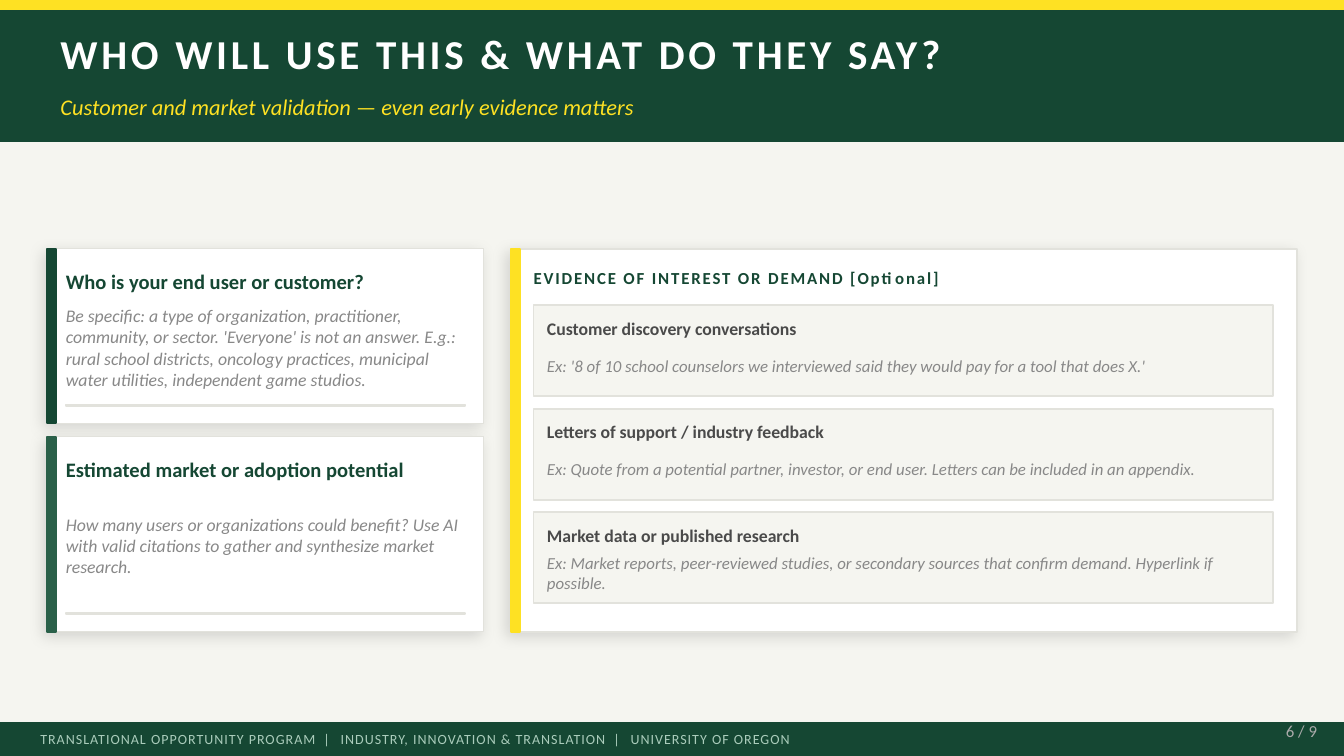
from dataclasses import dataclass

import pptx
import pptx.dml.color
import pptx.enum.shapes
import pptx.enum.text
import pptx.oxml
import pptx.oxml.ns
import pptx.util

Inches = pptx.util.Inches
Pt = pptx.util.Pt
PP_ALIGN = pptx.enum.text.PP_ALIGN

COLORS = {
    "green": "154733", "moss": "2A6049", "yellow": "FEE123", "paper": "F5F5F0",
    "white": "FFFFFF", "border": "E2E2DC", "ink": "4A4A4A", "hint": "888888",
    "footer": "AACCBB", "page": "AAAAAA",
}

# Font attributes, with colour and letter spacing (points) handled apart
STYLES = {
    "title": {"size": Pt(22), "bold": True, "color": "white", "spacing": 2},
    "subtitle": {"size": Pt(12), "italic": True, "color": "yellow"},
    "footer": {"size": Pt(7.5), "color": "footer", "spacing": 0.5},
    "divider": {"size": Pt(7.5), "color": "footer", "spacing": 2},
    "page": {"size": Pt(9), "color": "page"},
    "question": {"size": Pt(11), "bold": True, "color": "green"},
    "answer": {"size": Pt(9.5), "italic": True, "color": "hint"},
    "section": {"size": Pt(9), "bold": True, "color": "green", "spacing": 1},
    "evidence": {"size": Pt(9.5), "bold": True, "color": "ink"},
    "example": {"size": Pt(9), "italic": True, "color": "hint"},
}
FRAME = {
    "margin_left": 0, "margin_top": 0, "margin_right": 0, "margin_bottom": 0,
    "word_wrap": True,
    "auto_size": pptx.enum.text.MSO_AUTO_SIZE.NONE,
    "vertical_anchor": pptx.enum.text.MSO_ANCHOR.MIDDLE,
}
SHADOW_XML = (
    f'<a:outerShdw {pptx.oxml.ns.nsdecls("a")} blurRad="{Pt(8)}" dist="{Pt(3)}" '
    'dir="8100000" algn="bl" rotWithShape="0">'
    '<a:srgbClr val="000000"><a:alpha val="12000"/></a:srgbClr></a:outerShdw>'
)


@dataclass
class Box:
    left: float
    top: float
    width: float
    height: float

    def lengths(self) -> list:
        return [Inches(v) for v in (self.left, self.top, self.width, self.height)]


@dataclass
class Question:
    top: float
    height: float
    accent: str
    heading: str
    prompt: str


@dataclass
class Evidence:
    heading: str
    example: str


def rgb(color: str) -> pptx.dml.color.RGBColor:
    return pptx.dml.color.RGBColor.from_string(COLORS[color])


def add_rect(slide, box: Box, fill: str, line: str = "", weight: float = 1,
             shadow: bool = False) -> None:
    rect = slide.shapes.add_shape(pptx.enum.shapes.MSO_SHAPE.RECTANGLE, *box.lengths())
    rect.fill.solid()
    rect.fill.fore_color.rgb = rgb(fill)
    rect.line.color.rgb = rgb(line or fill)
    rect.line.width = Pt(weight)
    rect.shadow.inherit = False
    if shadow:
        effects = rect._element.spPr.find(pptx.oxml.ns.qn("a:effectLst"))
        effects.append(pptx.oxml.parse_xml(SHADOW_XML))


def add_run(paragraph, text: str, style: str) -> None:
    run = paragraph.add_run()
    run.text = text
    run.font.name = "Calibri"
    for attribute, value in STYLES[style].items():
        if attribute == "color":
            run.font.color.rgb = rgb(value)
        elif attribute == "spacing":
            run._r.get_or_add_rPr().set("spc", str(int(value * 100)))
        else:
            setattr(run.font, attribute, value)


def format_frame(shape, align=PP_ALIGN.LEFT):
    for attribute, value in FRAME.items():
        setattr(shape.text_frame, attribute, value)
    paragraph = shape.text_frame.paragraphs[0]
    paragraph.alignment = align
    return paragraph


def add_text(slide, box: Box, text: str, style: str, align=PP_ALIGN.LEFT) -> None:
    textbox = slide.shapes.add_textbox(*box.lengths())
    add_run(format_frame(textbox, align), text, style)


def add_card(slide, box: Box, accent: str, weight: float) -> None:
    add_rect(slide, box, "white", "border", weight, shadow=True)
    add_rect(slide, Box(box.left, box.top, 0.07, box.height), accent)


def add_question(slide, item: Question) -> None:
    add_card(slide, Box(0.35, item.top, 3.25, item.height), item.accent, 0.75)
    left = 0.49
    add_text(slide, Box(left, item.top + 0.1, 3, 0.28), item.heading, "question")
    add_text(slide, Box(left, item.top + 0.36, 3, item.height - 0.55), item.prompt, "answer")
    add_rect(slide, Box(left, item.top + item.height - 0.14, 2.97, 0.01), "border")


def add_evidence(slide, top: float, item: Evidence) -> None:
    add_rect(slide, Box(3.97, top, 5.5, 0.68), "paper", "border")
    add_text(slide, Box(4.07, top + 0.06, 5.3, 0.22), item.heading, "evidence")
    add_text(slide, Box(4.07, top + 0.28, 5.3, 0.34), item.example, "example")


QUESTIONS = [
    Question(1.85, 1.3, "green", "Who is your end user or customer?",
             "Be specific: a type of organization, practitioner, community, or sector. "
             "'Everyone' is not an answer. E.g.: rural school districts, oncology practices, "
             "municipal water utilities, independent game studios."),
    Question(3.25, 1.45, "moss", "Estimated market or adoption potential",
             "How many users or organizations could benefit? Use AI with valid citations "
             "to gather and synthesize market research."),
]
EVIDENCE = [
    Evidence("Customer discovery conversations",
             "Ex: '8 of 10 school counselors we interviewed said they would pay for a tool "
             "that does X.'"),
    Evidence("Letters of support / industry feedback",
             "Ex: Quote from a potential partner, investor, or end user. Letters can be "
             "included in an appendix."),
    Evidence("Market data or published research",
             "Ex: Market reports, peer-reviewed studies, or secondary sources that confirm "
             "demand. Hyperlink if possible."),
]
FOOTER = ["TRANSLATIONAL OPPORTUNITY PROGRAM", "INDUSTRY, INNOVATION & TRANSLATION",
          "UNIVERSITY OF OREGON"]


def main() -> None:
    # Widescreen slide, 16:9
    deck = pptx.Presentation()
    deck.slide_width, deck.slide_height = Inches(10), Inches(10 * 9 / 16)
    slide = deck.slides.add_slide(deck.slide_layouts.get_by_name("Title Only"))
    slide.background.fill.solid()
    slide.background.fill.fore_color.rgb = rgb("paper")

    # Header band, with the title brought in front of it
    add_rect(slide, Box(0, 0, 10, 1.05), "green")
    add_rect(slide, Box(0, 0, 10, 0.07), "yellow")
    title = slide.shapes.title
    title.left, title.top, title.width, title.height = Box(0.45, 0.12, 8.5, 0.55).lengths()
    add_run(format_frame(title), "WHO WILL USE THIS & WHAT DO THEY SAY?", "title")
    slide.shapes._spTree.append(title._element)
    add_text(slide, Box(0.45, 0.62, 8.5, 0.35),
             "Customer and market validation — even early evidence matters", "subtitle")

    # Footer band
    add_rect(slide, Box(0, 5.38, 10, 0.24), "green")
    footer = slide.shapes.add_textbox(*Box(0.3, 5.38, 9, 0.24).lengths())
    footer_line = format_frame(footer)
    for index, part in enumerate(FOOTER):
        if index:
            add_run(footer_line, " | ", "divider")
        add_run(footer_line, part, "footer")
    add_text(slide, Box(8.9, 5.33, 0.9, 0.22), "6 / 9", "page", PP_ALIGN.RIGHT)

    # Question cards
    for question in QUESTIONS:
        add_question(slide, question)

    # Evidence panel
    add_card(slide, Box(3.8, 1.85, 5.85, 2.85), "yellow", 1)
    add_text(slide, Box(3.97, 1.93, 5.5, 0.28),
             "EVIDENCE OF INTEREST OR DEMAND [Optional]", "section")
    for index, evidence in enumerate(EVIDENCE):
        add_evidence(slide, 2.27 + index * 0.77, evidence)

    deck.save("out.pptx")


if __name__ == "__main__":
    main()
